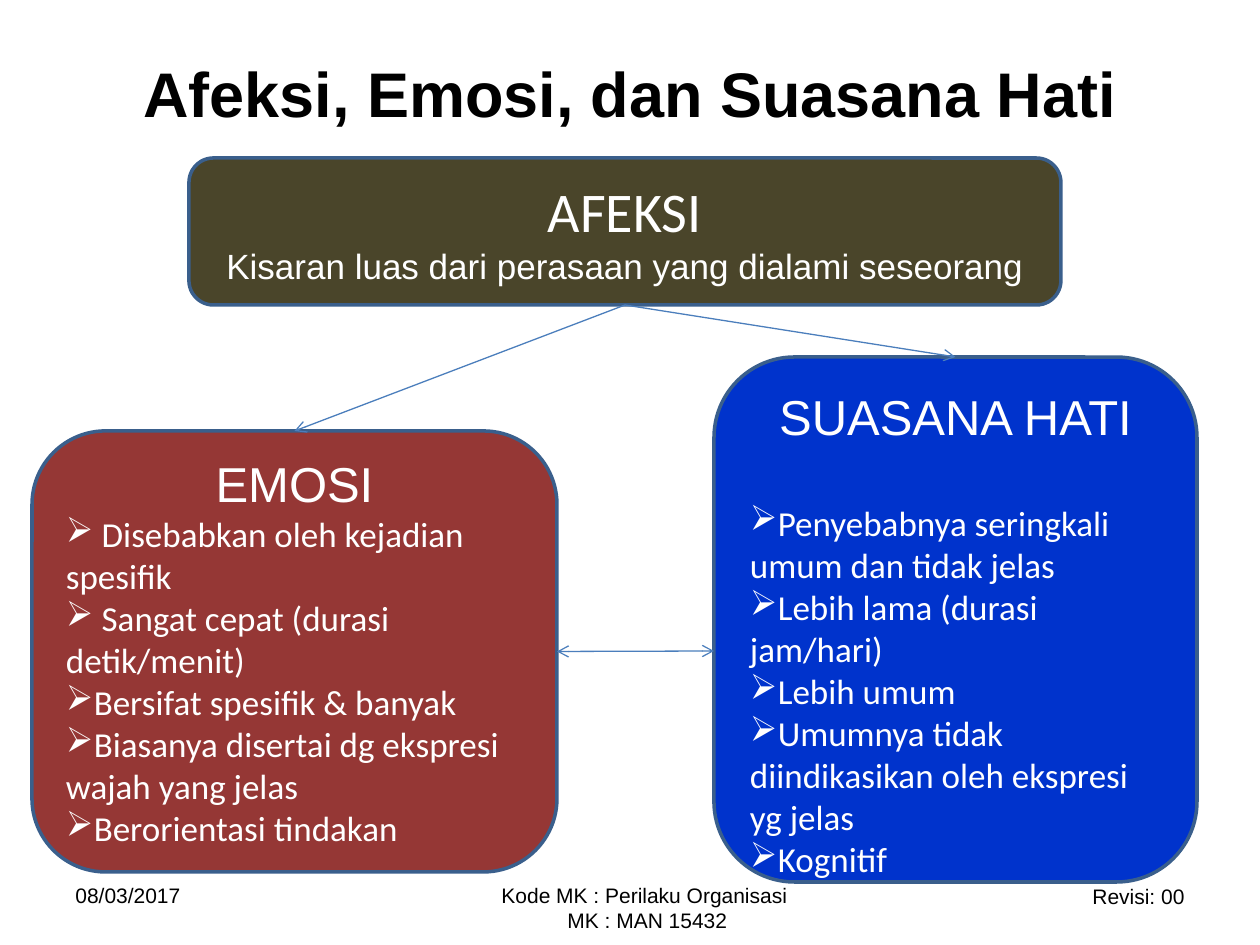
import pptx
import pptx.util
import pptx.dml.color
import pptx.enum.shapes
import pptx.enum.text
import pptx.oxml.ns
from lxml import etree

EMU_PER_PX = 914400 / 126
COLORS = {
    "black": "000000", "white": "FFFFFF", "olive": "4A452A", "red": "953735",
    "blue": "0033CC", "border": "3A5F8C", "arrow": "4B7EBC",
}
ALIGN = pptx.enum.text.PP_ALIGN
ANCHOR = pptx.enum.text.MSO_ANCHOR
qn = pptx.oxml.ns.qn


def px(*lengths):
    return [pptx.util.Emu(round(length * EMU_PER_PX)) for length in lengths]


def style(paragraph, align, font, size, color, bold=False):
    paragraph.alignment = align
    for run in paragraph.runs:
        run.font.name = font
        run.font.size = pptx.util.Pt(size)
        run.font.bold = bold
        run.font.color.rgb = pptx.dml.color.RGBColor.from_string(COLORS[color])


presentation = pptx.Presentation()
presentation.slide_width, presentation.slide_height = px(1260, 945)
slide = presentation.slides.add_slide(presentation.slide_layouts[6])

labels = [
    ("Revisi: 00", (903, 877, 294, 38), ALIGN.RIGHT, 12, False, ANCHOR.TOP),
    ("Afeksi, Emosi, dan Suasana Hati", (63, 37, 1134, 111), ALIGN.CENTER, 36, True, ANCHOR.MIDDLE),
    ("08/03/2017", (63, 876, 294, 50), ALIGN.LEFT, 12, False, ANCHOR.TOP),
    ("Kode MK : Perilaku Organisasi\n MK : MAN 15432", (431, 876, 427, 50), ALIGN.CENTER, 12, False, ANCHOR.TOP),
]
for text, place, align, size, bold, anchor in labels:
    frame = slide.shapes.add_textbox(*px(*place)).text_frame
    frame.word_wrap = True
    frame.vertical_anchor = anchor
    frame.text = text
    for paragraph in frame.paragraphs:
        style(paragraph, align, "Arial", size, "black", bold)

concepts = [
    ("AFEKSI", "Calibri", 32, 0, (189, 158, 872, 147), "olive", ANCHOR.MIDDLE, []),
    ("EMOSI", "Arial", 28, 0, (32, 431, 525, 441), "red", ANCHOR.MIDDLE, [
        " Disebabkan oleh kejadian spesifik",
        " Sangat cepat (durasi detik/menit)",
        "Bersifat spesifik & banyak",
        "Biasanya disertai dg ekspresi wajah yang jelas",
        "Berorientasi tindakan",
    ]),
    ("SUASANA HATI", "Arial", 28, 32, (714, 357, 483, 525), "blue", ANCHOR.TOP, [
        "Penyebabnya seringkali umum dan tidak jelas",
        "Lebih lama (durasi jam/hari)",
        "Lebih umum",
        "Umumnya tidak diindikasikan oleh ekspresi yg jelas",
        "Kognitif",
    ]),
]
boxes = []
for heading, font, size, gap, place, fill, anchor, traits in concepts:
    box = slide.shapes.add_shape(pptx.enum.shapes.MSO_SHAPE.ROUNDED_RECTANGLE, *px(*place))
    box.shadow.inherit = False
    box.fill.solid()
    box.fill.fore_color.rgb = pptx.dml.color.RGBColor.from_string(COLORS[fill])
    box.line.color.rgb = pptx.dml.color.RGBColor.from_string(COLORS["border"])
    box.line.width = pptx.util.Pt(2)
    frame = box.text_frame
    frame.word_wrap = True
    frame.vertical_anchor = anchor
    frame.text = heading
    style(frame.paragraphs[0], ALIGN.CENTER, font, size, "white")
    frame.paragraphs[0].space_after = pptx.util.Pt(gap)
    for trait in traits:
        paragraph = frame.add_paragraph()
        etree.SubElement(paragraph._p.get_or_add_pPr(), qn("a:buChar"), char="➢")
        paragraph.text = trait
        style(paragraph, ALIGN.LEFT, "Calibri", 20, "white")
    boxes.append(box)
affect, emotion, mood = boxes

definition = affect.text_frame.add_paragraph()
definition.text = "Kisaran luas dari perasaan yang dialami seseorang"
style(definition, ALIGN.CENTER, "Arial", 20, "white")

arrows = [
    (affect, 2, emotion, 0, (625, 305, 294, 431), ["a:tailEnd"]),
    (affect, 2, mood, 0, (625, 305, 955, 357), ["a:tailEnd"]),
    (emotion, 3, None, None, (557, 651, 714, 651), ["a:headEnd", "a:tailEnd"]),
]
for source, source_side, target, target_side, ends, heads in arrows:
    arrow = slide.shapes.add_connector(pptx.enum.shapes.MSO_CONNECTOR.STRAIGHT, *px(*ends))
    arrow.begin_connect(source, source_side)
    if target is not None:
        arrow.end_connect(target, target_side)
    arrow.line.color.rgb = pptx.dml.color.RGBColor.from_string(COLORS["arrow"])
    arrow.line.width = pptx.util.Pt(0.75)
    for head in heads:
        etree.SubElement(arrow.line._get_or_add_ln(), qn(head), type="arrow")
    etree.SubElement(arrow._element.spPr, qn("a:effectLst"))

presentation.save("out.pptx")
